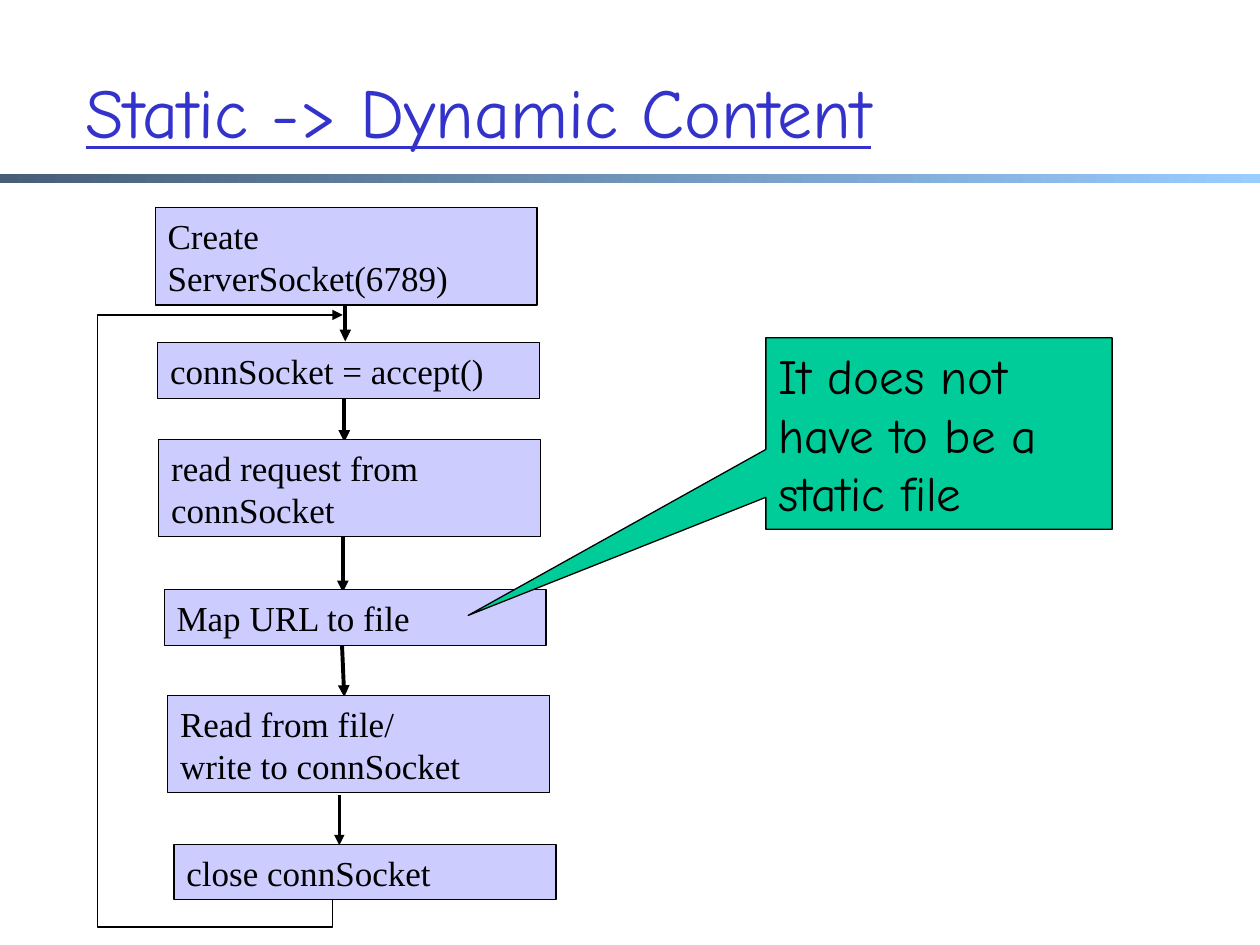
from lxml.etree import SubElement
from pptx import Presentation
from pptx.dml.color import RGBColor
from pptx.enum.shapes import MSO_CONNECTOR, MSO_SHAPE
from pptx.enum.text import MSO_ANCHOR, MSO_AUTO_SIZE, PP_ALIGN
from pptx.oxml.ns import qn
from pptx.util import Cm, Pt

COLORS = {
    "title": "3333CC", "ink": "000000", "step": "CCCCFF",
    "callout": "00CC99", "bar_from": "475E76", "bar_to": "99CCFF",
}
TITLE_FONT = {"name": "Comic Neue", "size": Pt(40), "underline": True}
STEP_FONT = {"name": "Times New Roman", "size": Pt(20)}
CALLOUT_FONT = {"name": "Comic Neue", "size": Pt(28)}

# Server steps: left, top, height (cm, within the flow region), text
STEP_WIDTH, ONE_LINE, TWO_LINES = 7.7, 1.12, 1.96
STEPS = [
    (1.17, 0, TWO_LINES, "Create ServerSocket(6789)"),
    (1.22, 2.72, ONE_LINE, "connSocket = accept()"),
    (1.24, 4.67, TWO_LINES, "read request from connSocket"),
    (1.35, 7.7, ONE_LINE, "Map URL to file"),
    (1.42, 9.83, TWO_LINES, "Read from file/\vwrite to connSocket"),
    (1.55, 12.83, ONE_LINE, "close connSocket"),
]
# Arrows between steps: x1, y1, x2, y2 (cm), line width (pt)
ARROWS = [
    (5, 1.6, 5, 2.69, 2.25),
    (4.98, 3.76, 4.98, 4.72, 2.25),
    (4.95, 6.43, 4.95, 7.75, 2.25),
    (4.93, 8.71, 4.98, 9.86, 2.25),
    (4.88, 11.84, 4.88, 12.85, 1.5),
]
LOOP_BACK = [(4.75, 13.94), (4.75, 14.5), (0, 14.5), (0, 2.16), (4.95, 2.16)]


def rgb(name):
    return RGBColor.from_string(COLORS[name])


def set_text(tf, text, font, color):
    tf.text = text
    tf.word_wrap = True
    tf.vertical_anchor = MSO_ANCHOR.MIDDLE
    p = tf.paragraphs[0]
    p.alignment = PP_ALIGN.LEFT
    for r in p.runs:
        for key, value in font.items():
            setattr(r.font, key, value)
        r.font.color.rgb = rgb(color)


def set_line(sp, width, arrow=False):
    sp.line.color.rgb = rgb("ink")
    sp.line.width = Pt(width)
    if arrow:
        ln = sp.element.spPr.find(qn("a:ln"))
        SubElement(ln, qn("a:tailEnd"), type="triangle")


def add_box(s, kind, box, text, font, fill):
    sp = s.shapes.add_shape(kind, *(Cm(v) for v in box))
    sp.shadow.inherit = False
    sp.fill.solid()
    sp.fill.fore_color.rgb = rgb(fill)
    set_line(sp, 0.75)
    set_text(sp.text_frame, text, font, "ink")
    sp.text_frame.auto_size = MSO_AUTO_SIZE.SHAPE_TO_FIT_TEXT
    return sp


def add_header(s, left, top, width):
    # Gradient bar
    bar = s.shapes.add_shape(MSO_SHAPE.RECTANGLE, Cm(left), Cm(top + 3.5),
                             Cm(width), Cm(0.2))
    bar.shadow.inherit = False
    bar.line.fill.background()
    bar.fill.gradient()
    bar.fill.gradient_angle = 0
    for stop, name in zip(bar.fill.gradient_stops, ("bar_from", "bar_to")):
        stop.color.rgb = rgb(name)
    # Title
    title = s.shapes.title
    place = {"left": left + 1.47, "top": top + 0.64, "width": 21.59, "height": 3.18}
    for key, value in place.items():
        setattr(title, key, Cm(value))
    set_text(title.text_frame, "Static -> Dynamic Content", TITLE_FONT, "title")
    title.text_frame.auto_size = MSO_AUTO_SIZE.NONE


def add_flow(s, left, top):
    # Arrows lie beneath the steps
    for x1, y1, x2, y2, width in ARROWS:
        cx = s.shapes.add_connector(MSO_CONNECTOR.STRAIGHT, Cm(left + x1), Cm(top + y1),
                                    Cm(left + x2), Cm(top + y2))
        set_line(cx, width, arrow=True)
        SubElement(cx.element.spPr, qn("a:effectLst"))
    # Return path from the last step to accept
    points = [(Cm(left + x), Cm(top + y)) for x, y in LOOP_BACK]
    path = s.shapes.build_freeform(*points[0])
    path.add_line_segments(points[1:], close=False)
    loop = path.convert_to_shape()
    loop.shadow.inherit = False
    loop.fill.background()
    set_line(loop, 0.75, arrow=True)
    # Steps
    for x, y, height, text in STEPS:
        add_box(s, MSO_SHAPE.RECTANGLE, (left + x, top + y, STEP_WIDTH, height),
                text, STEP_FONT, "step")


def add_callout(s, left, top, width, height):
    sp = add_box(s, MSO_SHAPE.RECTANGULAR_CALLOUT, (left, top, width, height),
                 "It does not have to be a static file", CALLOUT_FONT, "callout")
    sp.adjustments[0] = -1.36
    sp.adjustments[1] = 0.95


def main():
    prs = Presentation()
    prs.slide_width, prs.slide_height = Cm(25.4), Cm(19.05)
    s = prs.slides.add_slide(prs.slide_layouts[5])
    add_header(s, 0, 0, 25.4)
    add_flow(s, 1.96, 4.19)
    add_callout(s, 15.44, 6.81, 6.98, 3.86)
    prs.save("out.pptx")


if __name__ == "__main__":
    main()
